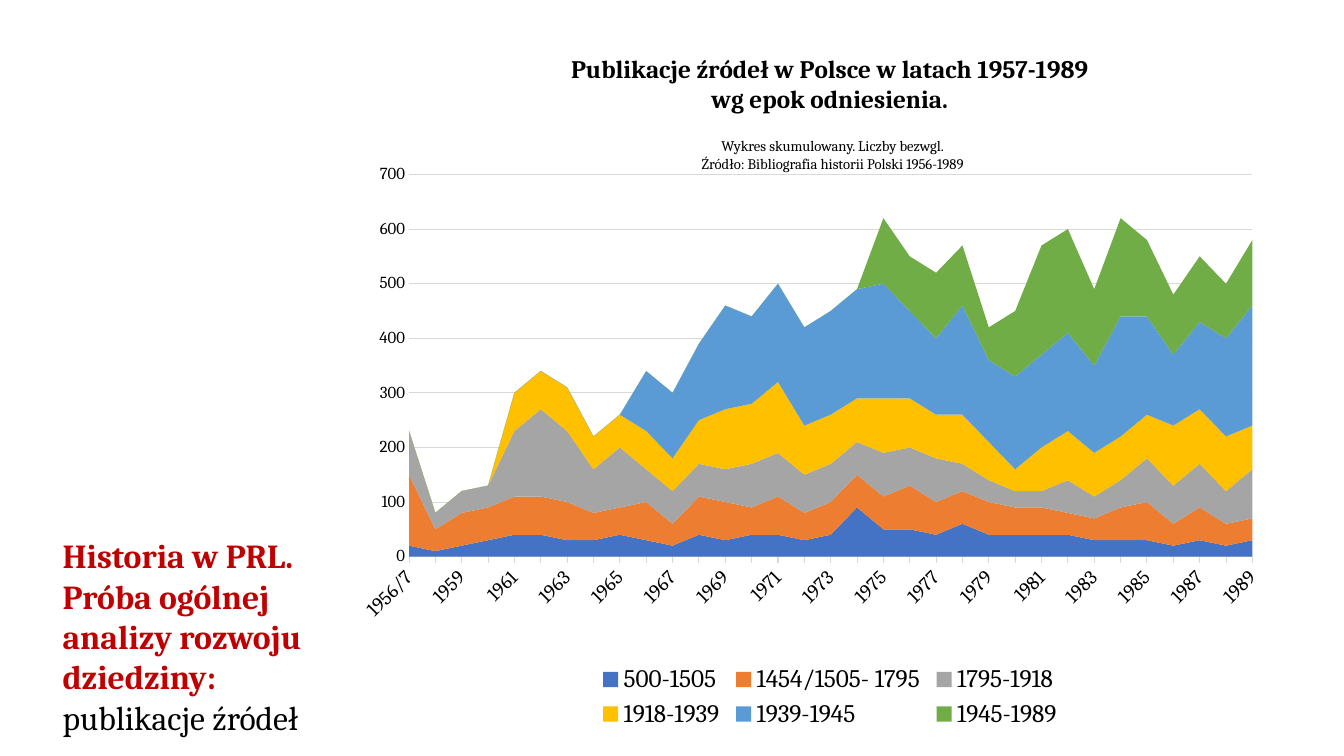
from dataclasses import dataclass

from lxml.etree import SubElement
from pptx import Presentation
from pptx.chart.chart import Chart
from pptx.chart.data import CategoryChartData
from pptx.dml.color import RGBColor
from pptx.enum.chart import XL_CHART_TYPE as ChartType, XL_LEGEND_POSITION as LegendPos
from pptx.enum.chart import XL_TICK_MARK as TickMark
from pptx.enum.text import MSO_ANCHOR as Anchor, MSO_AUTO_SIZE as AutoSize, PP_ALIGN as Align
from pptx.oxml.ns import qn
from pptx.slide import Slide
from pptx.util import Inches, Pt


@dataclass(frozen=True)
class Theme:
    font: str = "Cambria"
    black: RGBColor = RGBColor(0x00, 0x00, 0x00)
    accent: RGBColor = RGBColor(0xC0, 0x00, 0x00)
    grid: RGBColor = RGBColor(0xD9, 0xD9, 0xD9)
    heading: Pt = Pt(24)
    chart_title: Pt = Pt(18)
    subtitle: Pt = Pt(10.5)
    years: Pt = Pt(14)
    counts: Pt = Pt(12)
    legend: Pt = Pt(18)
    hairline: Pt = Pt(0.75)


@dataclass(frozen=True)
class Epoch:
    name: str
    color: str
    counts: list[int]


THEME = Theme()
YEARS = ["1956/7"] + [str(year) for year in range(1958, 1990)]
EPOCHS = [
    Epoch("500-1505", "4472C4",
          [20, 10, 20, 30, 40, 40, 30, 30, 40, 30, 20, 40, 30, 40, 40, 30, 40, 90, 50, 50, 40,
           60, 40, 40, 40, 40, 30, 30, 30, 20, 30, 20, 30]),
    Epoch("1454/1505- 1795", "ED7D31",
          [130, 40, 60, 60, 70, 70, 70, 50, 50, 70, 40, 70, 70, 50, 70, 50, 60, 60, 60, 80, 60,
           60, 60, 50, 50, 40, 40, 60, 70, 40, 60, 40, 40]),
    Epoch("1795-1918", "A5A5A5",
          [80, 30, 40, 40, 120, 160, 130, 80, 110, 60, 60, 60, 60, 80, 80, 70, 70, 60, 80, 70,
           80, 50, 40, 30, 30, 60, 40, 50, 80, 70, 80, 60, 90]),
    Epoch("1918-1939", "FFC000",
          [0] * 4 + [70, 70, 80, 60, 60, 70, 60, 80, 110, 110, 130, 90, 90, 80, 100, 90, 80,
                     90, 70, 40, 80, 90, 80, 80, 80, 110, 100, 100, 80]),
    Epoch("1939-1945", "5B9BD5",
          [0] * 9 + [110, 120, 140, 190, 160, 180, 180, 190, 200, 210, 160, 140, 200, 150, 170,
                     170, 180, 160, 220, 180, 130, 160, 180, 220]),
    Epoch("1945-1989", "70AD47",
          [0] * 18 + [120, 100, 120, 110, 60, 120, 200, 190, 140, 180, 140, 110, 120, 100, 120]),
]


def style_font(font, size: Pt, color: RGBColor = THEME.black, bold: bool = False) -> None:
    font.name, font.size, font.bold = THEME.font, size, bold
    font.color.rgb = color


def place_plot(chart: Chart, x: float, y: float, w: float, h: float) -> None:
    """Fix the inner plot area as fractions of the chart."""
    plot_area = chart._chartSpace.find(".//" + qn("c:plotArea"))
    for old in plot_area.findall(qn("c:layout")):
        plot_area.remove(old)
    layout = SubElement(plot_area, qn("c:layout"))
    plot_area.insert(0, layout)
    manual = SubElement(layout, qn("c:manualLayout"))
    settings = {"layoutTarget": "inner", "xMode": "edge", "yMode": "edge",
                "x": x, "y": y, "w": w, "h": h}
    for tag, value in settings.items():
        SubElement(manual, qn(f"c:{tag}")).set("val", str(value))


def style_axes(chart: Chart) -> None:
    years, counts = chart.category_axis, chart.value_axis
    years.major_tick_mark, years.minor_tick_mark = TickMark.OUTSIDE, TickMark.NONE
    years.has_major_gridlines = False
    years.format.line.color.rgb = THEME.grid
    years.format.line.width = THEME.hairline
    style_font(years.tick_labels.font, THEME.years)
    years._element.find(".//" + qn("a:bodyPr")).set("rot", "-2700000")

    counts.minimum_scale, counts.maximum_scale, counts.major_unit = 0, 700, 100
    counts.major_tick_mark = counts.minor_tick_mark = TickMark.NONE
    counts.format.line.fill.background()
    counts.has_major_gridlines = True
    counts.major_gridlines.format.line.color.rgb = THEME.grid
    counts.major_gridlines.format.line.width = THEME.hairline
    style_font(counts.tick_labels.font, THEME.counts)
    # Areas start right on the value axis
    counts._element.find(qn("c:crossBetween")).set("val", "midCat")


def add_publications_chart(slide: Slide) -> None:
    data = CategoryChartData(number_format="General")
    data.categories = YEARS
    for epoch in EPOCHS:
        data.add_series(epoch.name, epoch.counts)
    chart = slide.shapes.add_chart(ChartType.AREA_STACKED, Inches(3.4), Inches(0.31),
                                   Inches(9.66), Inches(6.97), data).chart
    style_font(chart.font, Pt(10))
    chart.plots[0].vary_by_categories = False
    for series, epoch in zip(chart.plots[0].series, EPOCHS):
        series.format.fill.solid()
        series.format.fill.fore_color.rgb = RGBColor.from_string(epoch.color)
        series.format.line.fill.background()

    chart.has_title = True
    title = chart.chart_title.text_frame
    title.text = "Publikacje źródeł w Polsce w latach 1957-1989\nwg epok odniesienia."
    for paragraph in title.paragraphs:
        for run in paragraph.runs:
            style_font(run.font, THEME.chart_title, bold=True)
    chart.chart_title.include_in_layout = False

    chart.has_legend = True
    chart.legend.position = LegendPos.BOTTOM
    chart.legend.include_in_layout = False
    style_font(chart.legend.font, THEME.legend)
    style_axes(chart)
    place_plot(chart, 0.068, 0.204, 0.866, 0.544)


def add_chart_subtitle(slide: Slide) -> None:
    frame = slide.shapes.add_textbox(Inches(6.26), Inches(1.31), Inches(4), Inches(0.48)).text_frame
    frame.word_wrap = True
    frame.text = "Wykres skumulowany. Liczby bezwgl.\nŹródło: Bibliografia historii Polski 1956-1989"
    for paragraph in frame.paragraphs:
        paragraph.alignment = Align.CENTER
        style_font(paragraph.runs[0].font, THEME.subtitle)


def fill_heading(slide: Slide) -> None:
    heading = slide.shapes.title
    heading.left, heading.top = Inches(0.52), Inches(5.26)
    heading.width, heading.height = Inches(3.02), Inches(2.12)
    frame = heading.text_frame
    frame.word_wrap, frame.auto_size = True, AutoSize.NONE
    frame.vertical_anchor = Anchor.TOP
    paragraph = frame.paragraphs[0]
    paragraph.alignment = Align.LEFT
    topic, subject = paragraph.add_run(), paragraph.add_run()
    topic.text = "Historia w PRL. Próba ogólnej analizy rozwoju dziedziny: "
    subject.text = "publikacje źródeł"
    style_font(topic.font, THEME.heading, THEME.accent, bold=True)
    style_font(subject.font, THEME.heading)


def main() -> None:
    deck = Presentation()
    deck.slide_width, deck.slide_height = Inches(13.33), Inches(7.5)
    slide = deck.slides.add_slide(deck.slide_layouts.get_by_name("Title Only"))
    add_publications_chart(slide)
    add_chart_subtitle(slide)
    fill_heading(slide)
    deck.save("out.pptx")


if __name__ == "__main__":
    main()
